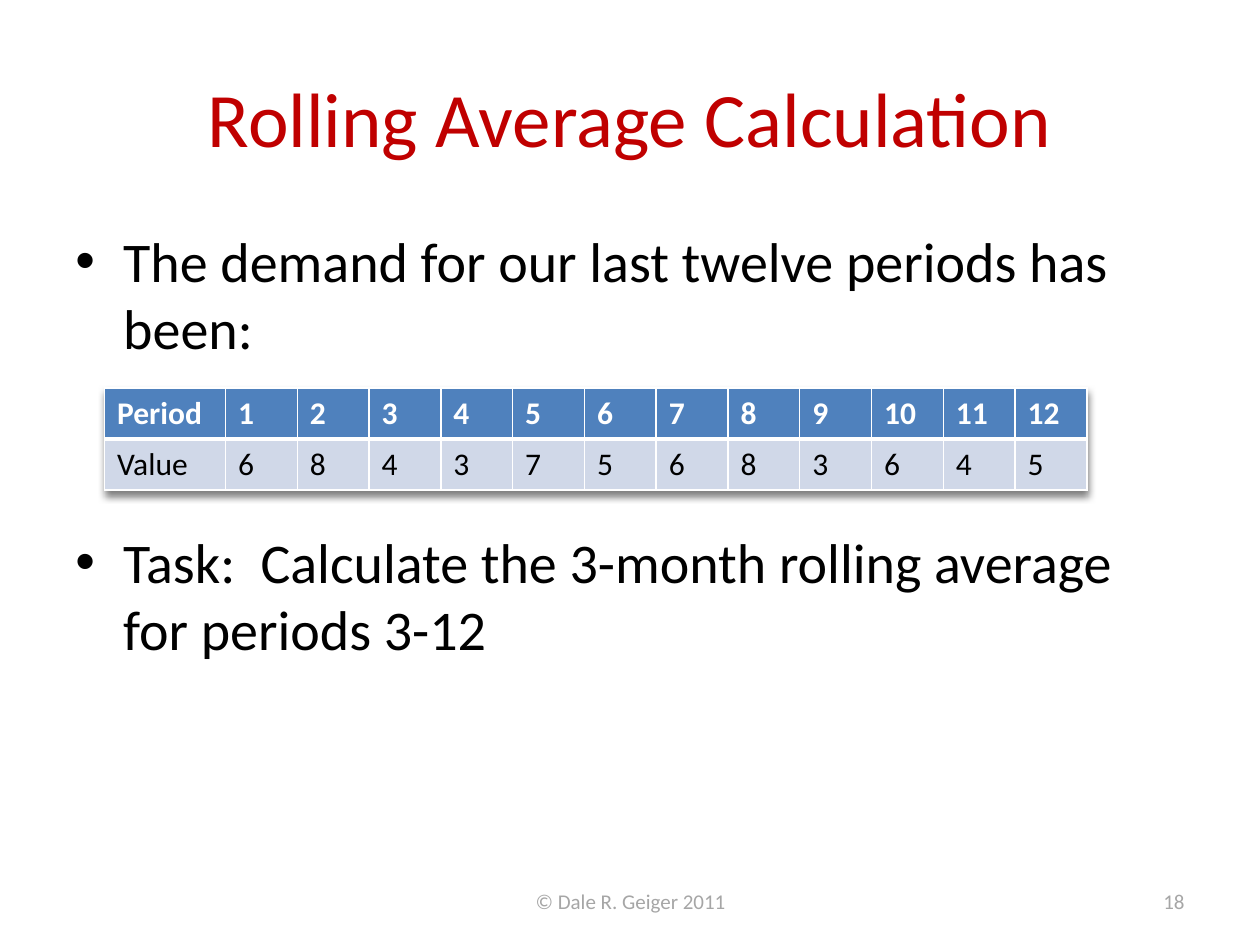
from lxml import etree
from pptx import Presentation
from pptx.dml.color import RGBColor
from pptx.enum.text import MSO_ANCHOR as Anchor, PP_ALIGN as Align
from pptx.oxml import parse_xml
from pptx.oxml.ns import nsdecls, qn
from pptx.util import Inches, Pt


def color(value):
    return RGBColor.from_string(value)


def add_run(paragraph, text, size, fill, bold=False):
    run = paragraph.add_run()
    run.text = text
    run.font.name = "Calibri"
    run.font.size = Pt(size)
    run.font.bold = bold
    run.font.color.rgb = color(fill)


presentation = Presentation()
presentation.slide_width = Inches(10)
presentation.slide_height = Inches(7.5)
slide = presentation.slides.add_slide(presentation.slide_layouts[6])

single_lines = [
    ("Rolling Average Calculation", 0.5, 0.3, 9, 1.25, 44, "C00000", Align.CENTER),
    ("© Dale R. Geiger 2011", 3.42, 6.95, 3.17, 0.4, 12, "A6A6A6", Align.CENTER),
    ("18", 7.17, 6.95, 2.33, 0.4, 12, "A6A6A6", Align.RIGHT),
]
for text, left, top, width, height, size, fill, align in single_lines:
    box = slide.shapes.add_textbox(Inches(left), Inches(top), Inches(width), Inches(height))
    frame = box.text_frame
    frame.word_wrap = True
    frame.vertical_anchor = Anchor.MIDDLE
    paragraph = frame.paragraphs[0]
    paragraph.alignment = align
    add_run(paragraph, text, size, fill)

body = slide.shapes.add_textbox(Inches(0.5), Inches(1.75), Inches(9), Inches(4.95))
body.text_frame.word_wrap = True
bullets = [
    ("The demand for our last twelve periods has been:", 6),
    ("Task:  Calculate the 3-month rolling average for periods 3-12", 95),
]
for index, (text, space_before) in enumerate(bullets):
    paragraph = body.text_frame.paragraphs[0] if index == 0 else body.text_frame.add_paragraph()
    paragraph.space_before = Pt(space_before)
    properties = paragraph._p.get_or_add_pPr()
    properties.set("marL", str(Inches(0.38)))
    properties.set("indent", str(Inches(-0.38)))
    etree.SubElement(properties, qn("a:buFont")).set("typeface", "Arial")
    etree.SubElement(properties, qn("a:buChar")).set("char", "•")
    add_run(paragraph, text, 32, "000000")

demand = [6, 8, 4, 3, 7, 5, 6, 8, 3, 6, 4, 5]
rows = [
    (["Period", *range(1, len(demand) + 1)], "4F81BD", "FFFFFF", True),
    (["Value", *demand], "D0D8E8", "000000", False),
]
table = slide.shapes.add_table(
    len(rows), len(demand) + 1, Inches(0.83), Inches(3.08), Inches(7.83), Inches(0.81)
).table
for index, column in enumerate(table.columns):
    column.width = Inches(0.96 if index == 0 else 0.57)

for row_index, (values, fill, text_color, bold) in enumerate(rows):
    for column_index, value in enumerate(values):
        cell = table.cell(row_index, column_index)
        add_run(cell.text_frame.paragraphs[0], str(value), 18, text_color, bold)
        properties = cell._tc.get_or_add_tcPr()
        for side in ("L", "R", "T", "B"):
            between_rows = (row_index, side) in ((0, "B"), (1, "T"))
            properties.append(parse_xml(
                f'<a:ln{side} {nsdecls("a")} w="{Pt(3 if between_rows else 1)}">'
                f'<a:solidFill><a:srgbClr val="FFFFFF"/></a:solidFill></a:ln{side}>'
            ))
        cell.fill.solid()
        cell.fill.fore_color.rgb = color(fill)

table._tbl.tblPr.insert(0, parse_xml(
    f'<a:effectLst {nsdecls("a")}>'
    f'<a:outerShdw blurRad="{Pt(4)}" dist="{Pt(3)}" dir="5400000" algn="t" rotWithShape="0">'
    '<a:srgbClr val="000000"><a:alpha val="50000"/></a:srgbClr>'
    '</a:outerShdw></a:effectLst>'
))

presentation.save("out.pptx")
